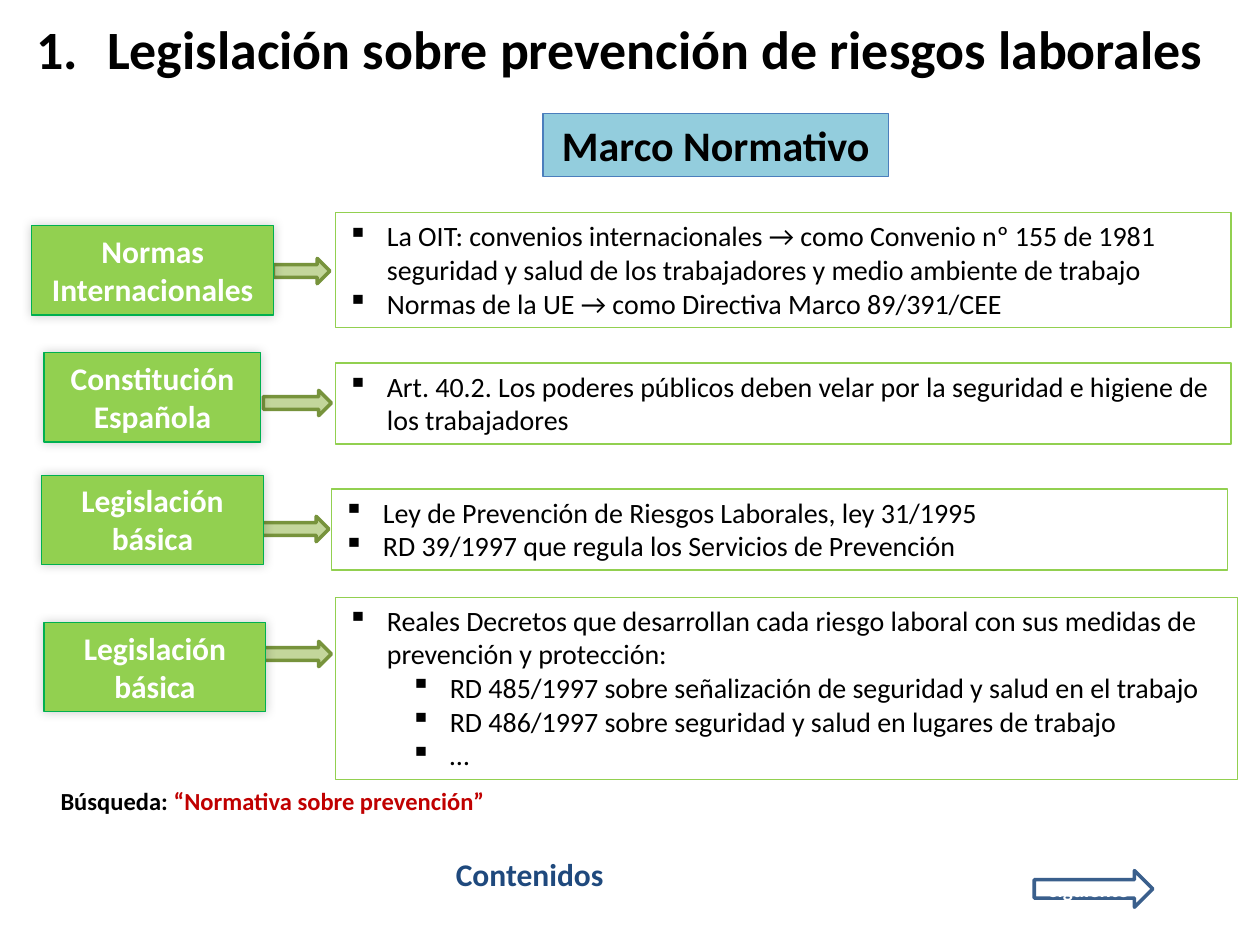
from dataclasses import dataclass
from typing import Optional

from lxml.etree import SubElement
from pptx import Presentation
from pptx.dml.color import RGBColor
from pptx.enum.shapes import MSO_SHAPE
from pptx.enum.text import MSO_ANCHOR, MSO_AUTO_SIZE, PP_ALIGN
from pptx.oxml.ns import qn
from pptx.util import Cm, Pt

BLACK = RGBColor(0x00, 0x00, 0x00)
WHITE = RGBColor(0xFF, 0xFF, 0xFF)
NAVY = RGBColor(0x1F, 0x49, 0x7D)
RED = RGBColor(0xC0, 0x00, 0x00)
SKY = RGBColor(0x93, 0xCD, 0xDD)
SKY_EDGE = RGBColor(0x4B, 0x7E, 0xBC)
LIME = RGBColor(0x92, 0xD0, 0x50)
GREEN = RGBColor(0x00, 0xB0, 0x50)
OLIVE_LIGHT = RGBColor(0xC3, 0xD6, 0x9B)
OLIVE = RGBColor(0x77, 0x93, 0x3C)
NEXT_EDGE = RGBColor(0x3A, 0x5F, 0x8C)


@dataclass(frozen=True)
class Area:
    """Position and size in centimetres."""
    left: float
    top: float
    width: float
    height: float

    def lengths(self) -> list:
        return [Cm(v) for v in (self.left, self.top, self.width, self.height)]


@dataclass(frozen=True)
class Source:
    """A kind of legislation, its arrow and the rules it holds as (level, text)."""
    name: str
    name_area: Area
    arrow_area: Area
    rules_area: Area
    rules: tuple


SOURCES = (
    Source("Normas Internacionales", Area(0.64, 4.55, 4.88, 1.8),
           Area(5.51, 5.21, 1.14, 0.51), Area(6.76, 4.29, 18.06, 2.31),
           ((0, "La OIT: convenios internacionales → como Convenio nº 155 de 1981 "
                "seguridad y salud de los trabajadores y medio ambiente de trabajo"),
            (0, "Normas de la UE → como Directiva Marco 89/391/CEE"))),
    Source("Constitución Española", Area(0.89, 7.11, 4.37, 1.8),
           Area(5.31, 7.87, 1.37, 0.51), Area(6.76, 7.32, 18.06, 1.63),
           ((0, "Art. 40.2. Los poderes públicos deben velar por la seguridad "
                "e higiene de los trabajadores"),)),
    Source("Legislación básica", Area(0.84, 9.58, 4.47, 1.8),
           Area(5.26, 10.41, 1.37, 0.51), Area(6.68, 9.86, 18.06, 1.63),
           ((0, "Ley de Prevención de Riesgos Laborales, ley 31/1995"),
            (0, "RD 39/1997 que regula los Servicios de Prevención"))),
    Source("Legislación básica", Area(0.89, 12.55, 4.47, 1.8),
           Area(5.31, 12.93, 1.37, 0.51), Area(6.76, 12.04, 18.19, 3.68),
           ((0, "Reales Decretos que desarrollan cada riesgo laboral con sus "
                "medidas de prevención y protección:"),
            (1, "RD 485/1997 sobre señalización de seguridad y salud en el trabajo"),
            (1, "RD 486/1997 sobre seguridad y salud en lugares de trabajo"),
            (1, "…"))),
)


def style(paragraph, size: float, color: RGBColor, bold: bool = True) -> None:
    font = paragraph.font
    font.name, font.size, font.bold = "Calibri", Pt(size), bold
    font.color.rgb = color


def add_bullet(paragraph, margin: float, hang: float, tag: str, **attributes) -> None:
    """Give the paragraph a hanging indent in centimetres and a bullet element."""
    properties = paragraph._p.get_or_add_pPr()
    properties.set("marL", str(Cm(margin)))
    properties.set("indent", str(-Cm(hang)))
    SubElement(properties, qn(tag), **attributes)


def add_figure(slide, kind: MSO_SHAPE, area: Area, edge: RGBColor,
               edge_width: float, fill: Optional[RGBColor] = None):
    figure = slide.shapes.add_shape(kind, *area.lengths())
    figure.shadow.inherit = False
    if fill is None:
        figure.fill.background()
    else:
        figure.fill.solid()
        figure.fill.fore_color.rgb = fill
    figure.line.color.rgb = edge
    figure.line.width = Pt(edge_width)
    return figure


def write(figure, text: str, size: float, color: RGBColor) -> None:
    """Write one centred bold paragraph."""
    paragraph = figure.text_frame.paragraphs[0]
    paragraph.text = text
    paragraph.alignment = PP_ALIGN.CENTER
    style(paragraph, size, color)


def grow_from_top(figure) -> None:
    frame = figure.text_frame
    frame.word_wrap = True
    frame.vertical_anchor = MSO_ANCHOR.TOP
    frame.auto_size = MSO_AUTO_SIZE.SHAPE_TO_FIT_TEXT


def add_soft_shadow(figure) -> None:
    effects = figure._element.spPr.find(qn("a:effectLst"))
    shadow = SubElement(effects, qn("a:outerShdw"), blurRad=str(Pt(6)), dist="0",
                        dir=str(225 * 60000), rotWithShape="0")
    color = SubElement(shadow, qn("a:srgbClr"), val=str(BLACK))
    SubElement(color, qn("a:alpha"), val="20000")


def add_rules(slide, source: Source) -> None:
    box = add_figure(slide, MSO_SHAPE.RECTANGLE, source.rules_area, LIME, 0.75)
    grow_from_top(box)
    frame = box.text_frame
    for index, (level, text) in enumerate(source.rules):
        paragraph = frame.add_paragraph() if index else frame.paragraphs[0]
        paragraph.text = text
        paragraph.level = level
        paragraph.alignment = PP_ALIGN.LEFT
        add_bullet(paragraph, 0.79 + 1.27 * level, 0.79, "a:buChar", char="▪")
        style(paragraph, 16, BLACK, bold=False)


def add_source(slide, source: Source) -> None:
    add_rules(slide, source)
    add_figure(slide, MSO_SHAPE.RIGHT_ARROW, source.arrow_area, OLIVE, 2, OLIVE_LIGHT)
    label = add_figure(slide, MSO_SHAPE.RECTANGLE, source.name_area, GREEN, 0.75, LIME)
    add_soft_shadow(label)
    grow_from_top(label)
    write(label, source.name, 18, WHITE)


def add_title(slide) -> None:
    title = slide.shapes.add_textbox(*Area(0.48, 0, 24.92, 1.93).lengths())
    title.text_frame.word_wrap = True
    title.text_frame.vertical_anchor = MSO_ANCHOR.MIDDLE
    paragraph = title.text_frame.paragraphs[0]
    paragraph.text = "Legislación sobre prevención de riesgos laborales"
    add_bullet(paragraph, 1.43, 1.43, "a:buAutoNum", type="arabicPeriod")
    style(paragraph, 30.8, BLACK)


def add_search(slide) -> None:
    search = slide.shapes.add_textbox(*Area(0.94, 15.72, 9.22, 0.86).lengths())
    search.text_frame.word_wrap = False
    search.text_frame.auto_size = MSO_AUTO_SIZE.SHAPE_TO_FIT_TEXT
    write(search, "Búsqueda:", 14, BLACK)
    query = search.text_frame.paragraphs[0].add_run()
    query.text = " “Normativa sobre prevención” "
    query.font.color.rgb = RED


def add_navigation(slide) -> None:
    contents = slide.shapes.add_textbox(*Area(8.94, 17.12, 3.66, 1.02).lengths())
    grow_from_top(contents)
    paragraph = contents.text_frame.paragraphs[0]
    paragraph.text = "Contenidos"
    style(paragraph, 18, NAVY)
    following = add_figure(slide, MSO_SHAPE.RIGHT_ARROW,
                           Area(20.85, 17.55, 2.39, 0.74), NEXT_EDGE, 2)
    write(following, "siguiente", 12, WHITE)


def main() -> None:
    presentation = Presentation()
    presentation.slide_width, presentation.slide_height = Cm(25.4), Cm(19.05)
    slide = presentation.slides.add_slide(presentation.slide_layouts[6])
    add_navigation(slide)
    add_title(slide)
    heading = add_figure(slide, MSO_SHAPE.RECTANGLE, Area(10.95, 2.29, 6.96, 1.27),
                         SKY_EDGE, 0.75, SKY)
    grow_from_top(heading)
    write(heading, "Marco Normativo", 24, BLACK)
    for source in SOURCES:
        add_source(slide, source)
    add_search(slide)
    presentation.save("out.pptx")


if __name__ == "__main__":
    main()
